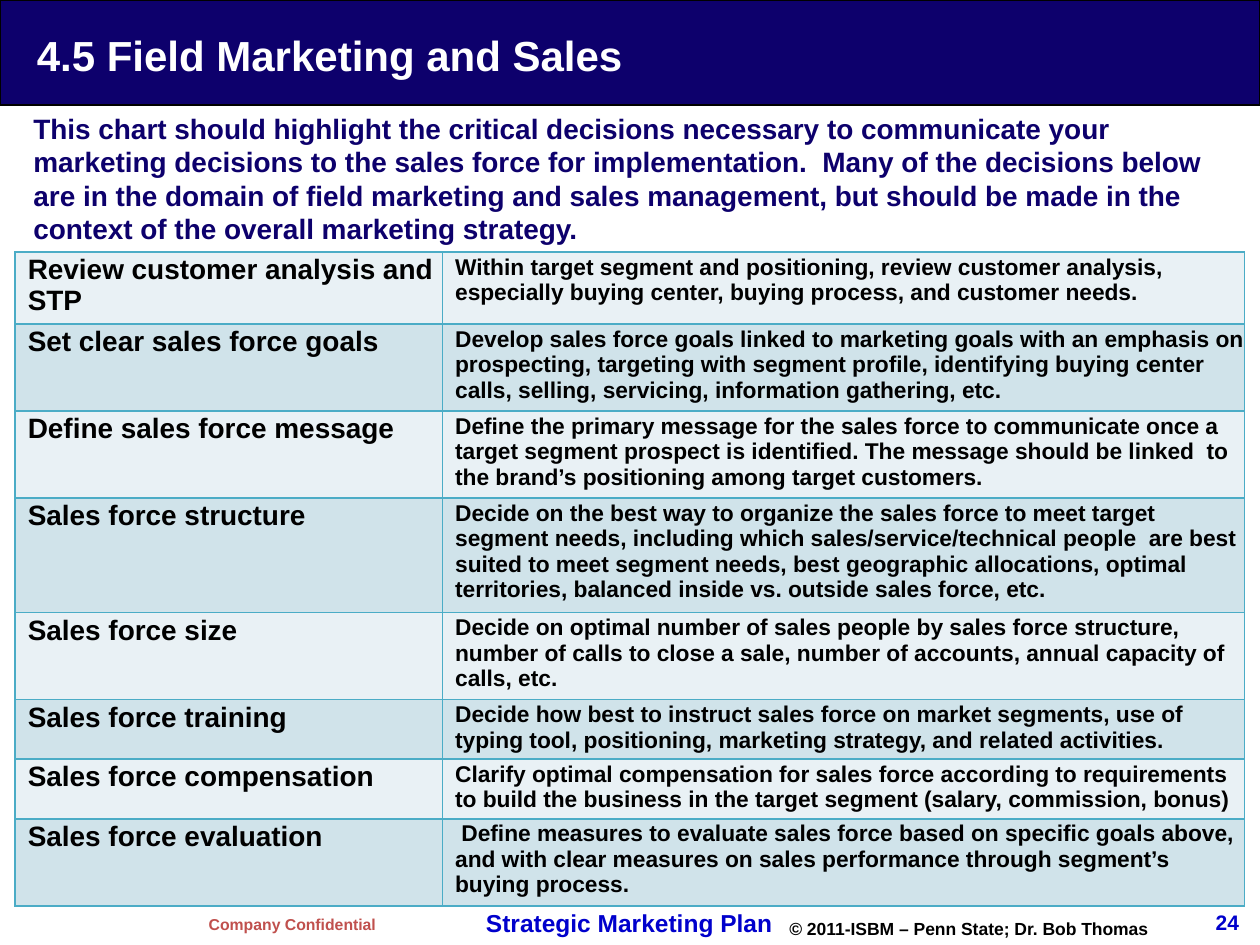
import pptx
import pptx.dml.color
import pptx.enum.shapes
import pptx.enum.text
import pptx.oxml
import pptx.oxml.ns
import pptx.util
from collections import namedtuple

RGBColor = pptx.dml.color.RGBColor
ANCHOR = pptx.enum.text.MSO_ANCHOR
ALIGN = pptx.enum.text.PP_ALIGN

NAVY = RGBColor(0x0D, 0x00, 0x6C)
BLUE = RGBColor(0x00, 0x00, 0xCC)
RED = RGBColor(0xC0, 0x50, 0x4D)
BLACK = RGBColor(0, 0, 0)
WHITE = RGBColor(0xFF, 0xFF, 0xFF)
PALE = RGBColor(0xE9, 0xF1, 0xF5)
TINT = RGBColor(0xD0, 0xE3, 0xEA)
TEAL = RGBColor(0x4B, 0xAC, 0xC6)

COLUMNS, ROWS = 120, 90
UNIT = pptx.util.Inches(10) / COLUMNS

Box = namedtuple("Box", "left top width height")

DECISIONS = [
    (6.6, "Review customer analysis and STP",
     "Within target segment and positioning, review customer analysis, especially buying center, "
     "buying process, and customer needs."),
    (7.8, "Set clear sales force goals",
     "Develop sales force goals linked to marketing goals with an emphasis on prospecting, targeting "
     "with segment profile, identifying buying center calls, selling, servicing, information gathering, etc."),
    (7.8, "Define sales force message",
     "Define the primary message for the sales force to communicate once a target segment prospect is "
     "identified. The message should be linked  to the brand’s positioning among target customers."),
    (10.1, "Sales force structure",
     "Decide on the best way to organize the sales force to meet target segment needs, including which "
     "sales/service/technical people  are best suited to meet segment needs, best geographic allocations, "
     "optimal territories, balanced inside vs. outside sales force, etc."),
    (7.8, "Sales force size",
     "Decide on optimal number of sales people by sales force structure, number of calls to close a sale, "
     "number of accounts, annual capacity of calls, etc."),
    (5.5, "Sales force training",
     "Decide how best to instruct sales force on market segments, use of typing tool, positioning, "
     "marketing strategy, and related activities."),
    (5.5, "Sales force compensation",
     "Clarify optimal compensation for sales force according to requirements to build the business in the "
     "target segment (salary, commission, bonus)"),
    (7.8, "Sales force evaluation",
     " Define measures to evaluate sales force based on specific goals above, and with clear measures on "
     "sales performance through segment’s buying process."),
]


def units(count):
    return pptx.util.Emu(round(count * UNIT))


def place(box):
    return [units(length) for length in box]


def write(frame, words, size, color, align=ALIGN.LEFT):
    frame.text = words
    paragraph = frame.paragraphs[0]
    paragraph.alignment = align
    font = paragraph.runs[0].font
    font.name, font.size, font.bold = "Arial", pptx.util.Pt(size), True
    font.color.rgb = color


def set_margins(holder, left, top, right, bottom):
    holder.margin_left, holder.margin_top = units(left), units(top)
    holder.margin_right, holder.margin_bottom = units(right), units(bottom)


def add_words(slide, box, words, size, color, wrap=True):
    frame = slide.shapes.add_textbox(*place(box)).text_frame
    frame.word_wrap = wrap
    write(frame, words, size, color)
    return frame


def add_header(slide, box):
    band = slide.shapes.add_shape(pptx.enum.shapes.MSO_SHAPE.RECTANGLE, *place(box))
    band.shadow.inherit = False
    band.fill.solid()
    band.fill.fore_color.rgb = NAVY
    band.line.color.rgb = BLACK
    band.line.width = pptx.util.Pt(0.75)
    title = slide.shapes.title
    band._element.addnext(title._element)
    title.left, title.top, title.width, title.height = place(
        Box(box.left + 2, box.top + 0.4, box.width - 4, box.height - 0.4))
    frame = title.text_frame
    frame.word_wrap = True
    frame.vertical_anchor = ANCHOR.MIDDLE
    set_margins(frame, 1.5, 0, 0, 0)
    write(frame, "4.5 Field Marketing and Sales", 24, WHITE)


def add_introduction(slide, box):
    add_words(
        slide, box,
        "This chart should highlight the critical decisions necessary to communicate your marketing decisions "
        "to the sales force for implementation.  Many of the decisions below are in the domain of field "
        "marketing and sales management, but should be made in the context of the overall marketing strategy.",
        16, NAVY)


def outline_cell(cell):
    properties = cell._tc.get_or_add_tcPr()
    for position, side in enumerate(("lnL", "lnR", "lnT", "lnB")):
        properties.insert(position, pptx.oxml.parse_xml(
            f'<a:{side} {pptx.oxml.ns.nsdecls("a")} w="{pptx.util.Pt(1)}">'
            f'<a:solidFill><a:srgbClr val="{TEAL}"/></a:solidFill></a:{side}>'))


def add_decisions(slide, box):
    table = slide.shapes.add_table(len(DECISIONS), 2, *place(box)).table
    table.first_row = table.horz_banding = False
    topic_width = 40.7
    table.columns[0].width = units(topic_width)
    table.columns[1].width = units(box.width - topic_width)
    for index, (height, topic, advice) in enumerate(DECISIONS):
        table.rows[index].height = units(height)
        for column, (words, size) in enumerate(((topic, 16), (advice, 13))):
            cell = table.cell(index, column)
            set_margins(cell, 1.2, 0.24, 0, 0.24)
            cell.fill.solid()
            cell.fill.fore_color.rgb = TINT if index % 2 else PALE
            write(cell.text_frame, words, size, BLACK)
            outline_cell(cell)


def add_footer(slide, box):
    def part(left, top, width, height):
        return Box(box.left + left, box.top + top, width, height)

    add_words(slide, part(18.7, 1.5, 18.4, 3), "Company Confidential", 9, RED, wrap=False)
    add_words(slide, part(45.1, 0.9, 29.9, 4.1), "Strategic Marketing Plan", 14, BLUE, wrap=False)
    add_words(slide, part(74, 1.8, 41, 3.2), "© 2011-ISBM – Penn State; Dr. Bob Thomas", 10, BLACK)
    number = add_words(slide, part(108, 0, 10, 4), "24", 12, BLUE)
    number.paragraphs[0].alignment = ALIGN.RIGHT
    number.vertical_anchor = ANCHOR.BOTTOM
    set_margins(number, 0, 0, 0, 0)


def main():
    presentation = pptx.Presentation()
    presentation.slide_width, presentation.slide_height = units(COLUMNS), units(ROWS)
    slide = presentation.slides.add_slide(presentation.slide_layouts[5])
    add_footer(slide, Box(0, 85, COLUMNS, 5))
    add_header(slide, Box(0, 0, COLUMNS, 10))
    add_introduction(slide, Box(2, 10, 116, 16))
    add_decisions(slide, Box(1.45, 24, 117.1, sum(row[0] for row in DECISIONS)))
    presentation.save("out.pptx")


if __name__ == "__main__":
    main()
